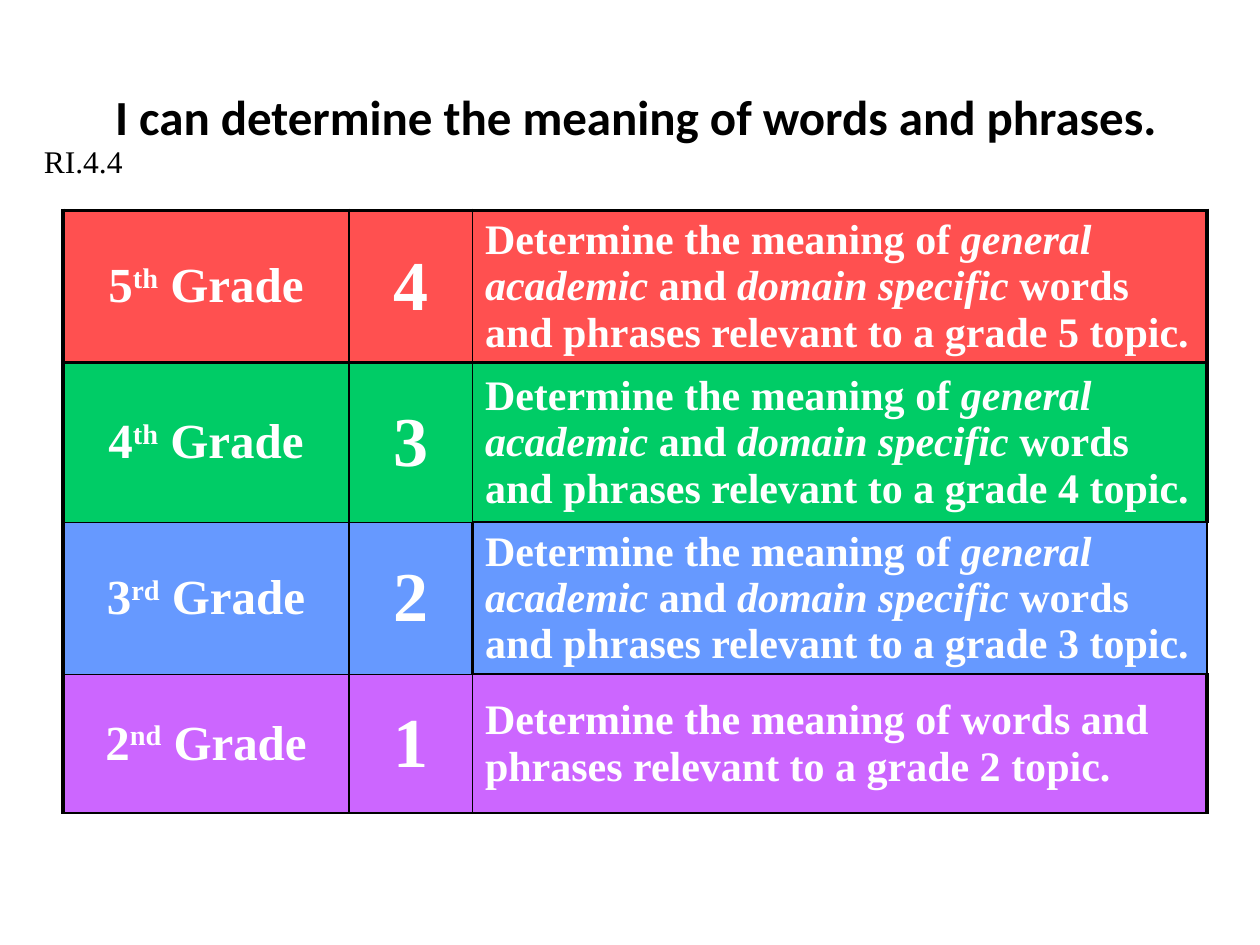
from lxml.etree import SubElement
from pptx import Presentation
from pptx.dml.color import RGBColor
from pptx.enum.text import MSO_ANCHOR, MSO_AUTO_SIZE, PP_ALIGN
from pptx.oxml.ns import qn
from pptx.util import Inches, Pt

BLACK = RGBColor(0x00, 0x00, 0x00)
WHITE = RGBColor(0xFF, 0xFF, 0xFF)
RED = RGBColor(0xFF, 0x50, 0x50)
GREEN = RGBColor(0x00, 0xCC, 0x66)
BLUE = RGBColor(0x66, 0x99, 0xFF)
PURPLE = RGBColor(0xCC, 0x66, 0xFF)
SERIF = "Times New Roman"

COL_WIDTHS = [2.27, 0.98, 5.83]
ROW_HEIGHTS = [1.1, 1.27, 1.1, 1.1]
GRADES = [(5, "th", RED), (4, "th", GREEN), (3, "rd", BLUE), (2, "nd", PURPLE)]

# Rule widths in points: one list per horizontal line, one per row of cells.
H_RULES = [[2.25] * 3, [1.5] * 3, [1, 1, 1.5], [1, 1, 1.5], [1.5] * 3]
OUTER_RULES = [2.25, 1, 1, 2.25]
V_RULES = [OUTER_RULES, OUTER_RULES, [2.25, 1.5, 1.5, 1.5], OUTER_RULES]


def add_text(p, text, size, font=SERIF, color=BLACK, bold=False, italic=False,
             raised=False):
    r = p.add_run()
    r.text = text
    r.font.name, r.font.size = font, Pt(size)
    r.font.bold, r.font.italic = bold, italic
    r.font.color.rgb = color
    if raised:
        r.font._element.set("baseline", "30000")


def space_before_percent(p, percent):
    spacing = SubElement(p._p.get_or_add_pPr(), qn("a:spcBef"))
    SubElement(spacing, qn("a:spcPct"), val=str(percent * 1000))


def set_borders(cell, left, right, top, bottom):
    """Draw black cell borders; call before filling, as lines precede the fill."""
    tcPr = cell._tc.get_or_add_tcPr()
    for side, width in zip("LRTB", (left, right, top, bottom)):
        ln = SubElement(tcPr, qn(f"a:ln{side}"), w=str(Pt(width)))
        fill = SubElement(ln, qn("a:solidFill"))
        SubElement(fill, qn("a:srgbClr"), val=str(BLACK))


def description(grade):
    """Return the (text, italic) pieces of a grade's goal."""
    ending = f"phrases relevant to a grade {grade} topic."
    if grade == 2:
        return [(f"Determine the meaning of words and {ending}", False)]
    return [("Determine the meaning of ", False), ("general academic", True),
            (" and ", False), ("domain specific ", True),
            (f"words and {ending}", False)]


class SlideBuilder:
    def __init__(self, prs):
        self.s = prs.slides.add_slide(prs.slide_layouts[5])

    def title(self, text, *box):
        sp = self.s.shapes.title
        sp.left, sp.top, sp.width, sp.height = map(Inches, box)
        tf = sp.text_frame
        tf.vertical_anchor = MSO_ANCHOR.MIDDLE
        p = tf.paragraphs[0]
        p.alignment = PP_ALIGN.CENTER
        add_text(p, text, 28, font="Calibri", bold=True)

    def label(self, text, *box):
        tf = self.s.shapes.add_textbox(*map(Inches, box)).text_frame
        tf.word_wrap = True
        tf.auto_size = MSO_AUTO_SIZE.SHAPE_TO_FIT_TEXT
        add_text(tf.paragraphs[0], text, 18)

    def cell(self, cell, pieces, size, fill, align, borders):
        """Fill a cell; each piece is its text and its run format."""
        set_borders(cell, *borders)
        cell.fill.solid()
        cell.fill.fore_color.rgb = fill
        cell.vertical_anchor = MSO_ANCHOR.MIDDLE
        p = cell.text_frame.paragraphs[0]
        p.alignment = align
        space_before_percent(p, 20)
        for text, fmt in pieces:
            add_text(p, text, size, color=WHITE, bold=True, **fmt)

    def grade_table(self, left, top):
        table = self.s.shapes.add_table(
            len(GRADES), len(COL_WIDTHS), Inches(left), Inches(top),
            Inches(sum(COL_WIDTHS)), Inches(sum(ROW_HEIGHTS))).table
        for col, width in zip(table.columns, COL_WIDTHS):
            col.width = Inches(width)
        for row, height in zip(table.rows, ROW_HEIGHTS):
            row.height = Inches(height)
        for i, (grade, suffix, fill) in enumerate(GRADES):
            goal = [(text, {"italic": it}) for text, it in description(grade)]
            name = [(str(grade), {}), (suffix, {"raised": True}), (" Grade", {})]
            level = [(str(grade - 1), {})]
            contents = [(name, 28, PP_ALIGN.CENTER),
                        (level, 40, PP_ALIGN.CENTER),
                        (goal, 24, PP_ALIGN.LEFT)]
            for j, (pieces, size, align) in enumerate(contents):
                borders = (V_RULES[i][j], V_RULES[i][j + 1],
                           H_RULES[i][j], H_RULES[i + 1][j])
                self.cell(table.cell(i, j), pieces, size, fill, align, borders)


def main():
    prs = Presentation()
    prs.slide_width, prs.slide_height = Inches(10), Inches(7.5)
    slide = SlideBuilder(prs)
    slide.title("I can determine the meaning of words and phrases.",
                0.42, 0.42, 9.25, 1)
    slide.grade_table(0.5, 1.67)
    slide.label("RI.4.4", 0.25, 1.08, 1.42, 0.4)
    prs.save("out.pptx")


if __name__ == "__main__":
    main()
